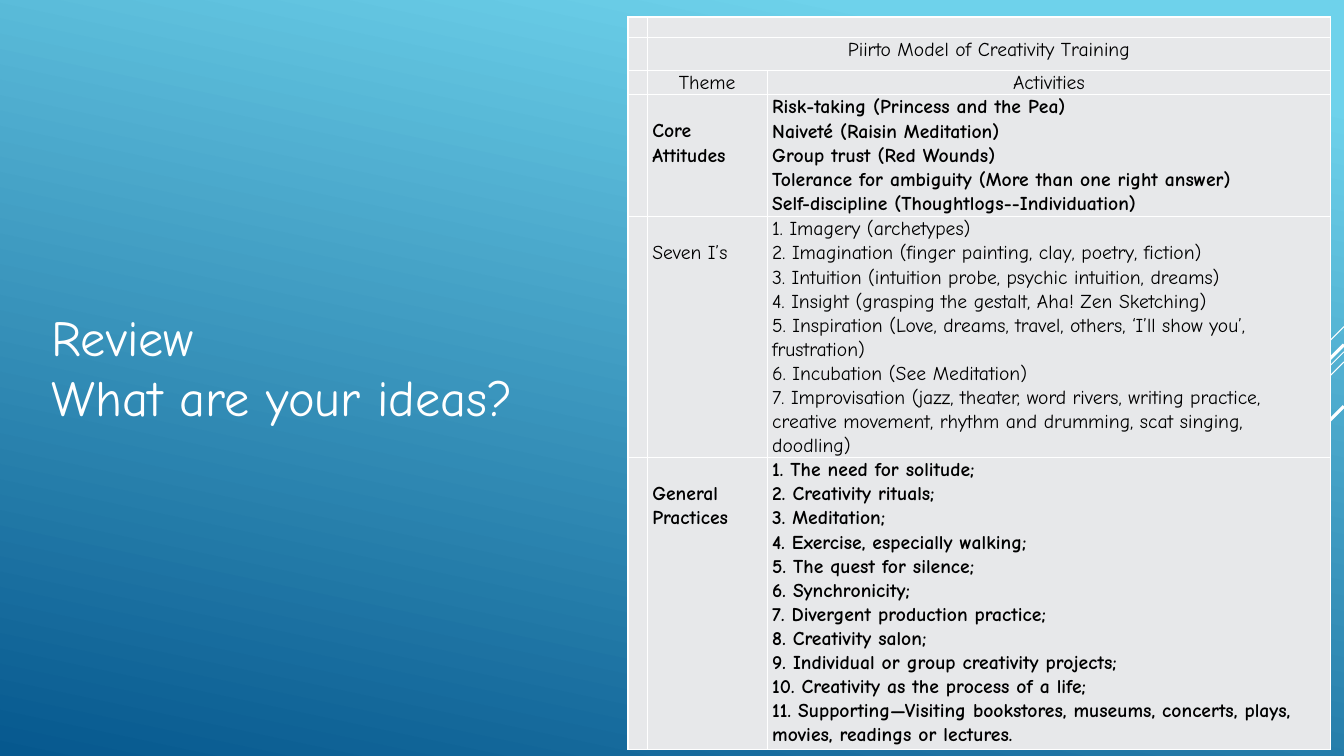
from dataclasses import dataclass

from lxml import etree
from pptx import Presentation, util as u
from pptx.dml.color import RGBColor
from pptx.enum import shapes, text
from pptx.oxml import ns

TITLE_LINES = ["Review ", "What are your ideas?"]
TABLE_TITLE = "Piirto Model of Creativity Training"
HEADINGS = ["Theme", "Activities"]
# theme, bold, activities
SECTIONS = [
    ("Core Attitudes", True, [
        "Risk-taking (Princess and the Pea)",
        "Naiveté (Raisin Meditation)",
        "Group trust (Red Wounds)",
        "Tolerance for ambiguity (More than one right answer)",
        "Self-discipline (Thoughtlogs--Individuation)",
    ]),
    ("Seven I’s", False, [
        "1. Imagery (archetypes)",
        "2. Imagination (finger painting, clay, poetry, fiction)",
        "3. Intuition (intuition probe, psychic intuition, dreams)",
        "4. Insight (grasping the gestalt, Aha! Zen Sketching)",
        "5. Inspiration (Love, dreams, travel, others, ‘I’ll show you’, frustration)",
        "6. Incubation (See Meditation)",
        "7. Improvisation (jazz, theater, word rivers, writing practice, "
        "creative movement, rhythm and drumming, scat singing, doodling)",
    ]),
    ("General Practices", True, [
        "1. The need for solitude;",
        "2. Creativity rituals;",
        "3. Meditation;",
        "4. Exercise, especially walking;",
        "5. The quest for silence;",
        "6. Synchronicity;",
        "7. Divergent production practice;",
        "8. Creativity salon;",
        "9. Individual or group creativity projects;",
        "10. Creativity as the process of a life;",
        "11. Supporting—Visiting bookstores, museums, concerts, plays, "
        "movies, readings or lectures.",
    ]),
]


@dataclass(frozen=True)
class Theme:
    font: str = "Comic Neue"
    title_size: float = 36
    table_size: float = 14
    empty_size: float = 8
    border: float = 1
    line_spacing: float = 1.07
    white: RGBColor = RGBColor(0xFF, 0xFF, 0xFF)
    black: RGBColor = RGBColor(0, 0, 0)
    cell: RGBColor = RGBColor(0xE7, 0xE8, 0xEA)
    sky: RGBColor = RGBColor(0x6E, 0xD2, 0xEB)
    sea: RGBColor = RGBColor(0x06, 0x58, 0x8E)


THEME = Theme()
SLIDE_WIDTH, SLIDE_HEIGHT = 960, 540
TITLE_BOX = (29.5, 31, 391.7, 461.5)
TABLE_LEFT, TABLE_TOP = 448.6, 12.2
COLUMN_WIDTHS = [13.7, 85.7, 402.5]
ROW_HEIGHTS = [14.4, 23.8, 17.3, 87.1, 172, 208.8]
CELL_INSET = 3.6
THEME_DROP = 17.2  # one line of table text
# start height on the right edge, run (equal across and down), line width
DIAGONALS = [
    (233.3, 72, 0.75),
    (251.3, 234.7, 0.75),
    (258.5, 149, 0.75),
    (246.2, 137.5, 2.25),
    (290.2, 100, 2.25),
]


def add_run(paragraph, words, size, color, bold=False):
    run = paragraph.add_run()
    run.text = words
    run.font.name = THEME.font
    run.font.size = u.Pt(size)
    run.font.bold = bold
    run.font.color.rgb = color


def paint_background(slide):
    fill = slide.background.fill
    fill.gradient()
    fill.gradient_angle = 258
    for stop, (position, color) in zip(fill.gradient_stops, [(0.1, THEME.sky), (1, THEME.sea)]):
        stop.position = position
        stop.color.rgb = color


def add_title(slide):
    title = slide.shapes.title
    title.left, title.top, title.width, title.height = map(u.Pt, TITLE_BOX)
    frame = title.text_frame
    frame.word_wrap = True
    frame.auto_size = text.MSO_AUTO_SIZE.NONE
    frame.vertical_anchor = text.MSO_ANCHOR.MIDDLE
    paragraph = frame.paragraphs[0]
    paragraph.alignment = text.PP_ALIGN.LEFT
    for index, line in enumerate(TITLE_LINES):
        if index:
            paragraph.add_line_break()
        add_run(paragraph, line, THEME.title_size, THEME.white)


def add_diagonals(slide):
    for top, run, width in DIAGONALS:
        line = slide.shapes.add_connector(
            shapes.MSO_CONNECTOR.STRAIGHT, u.Pt(SLIDE_WIDTH), u.Pt(top),
            u.Pt(SLIDE_WIDTH - run), u.Pt(top + run))
        line.line.color.rgb = THEME.white
        line.line.width = u.Pt(width)
        etree.SubElement(line._element.spPr, ns.qn("a:effectLst"))


def format_cell(cell):
    """Fill and border a cell, and keep its empty line from stretching the row."""
    cell.fill.solid()
    cell.fill.fore_color.rgb = THEME.cell
    cell.margin_left = cell.margin_right = u.Pt(CELL_INSET)
    cell.margin_top = cell.margin_bottom = 0
    properties = cell._tc.get_or_add_tcPr()
    for index, side in enumerate(["a:lnL", "a:lnR", "a:lnT", "a:lnB"]):
        border = etree.Element(ns.qn(side), w=str(u.Pt(THEME.border)))
        fill = etree.SubElement(border, ns.qn("a:solidFill"))
        etree.SubElement(fill, ns.qn("a:srgbClr"), val=str(THEME.white))
        properties.insert(index, border)
    etree.SubElement(cell.text_frame.paragraphs[0]._p, ns.qn("a:endParaRPr"),
                     sz=str(THEME.empty_size * 100))


def write_cell(cell, lines, bold=False, alignment=text.PP_ALIGN.LEFT):
    frame = cell.text_frame
    for index, line in enumerate(lines):
        paragraph = frame.add_paragraph() if index else frame.paragraphs[0]
        paragraph.alignment = alignment
        paragraph.line_spacing = THEME.line_spacing
        add_run(paragraph, line, THEME.table_size, THEME.black, bold)


def add_model_table(slide):
    table = slide.shapes.add_table(
        len(ROW_HEIGHTS), len(COLUMN_WIDTHS), u.Pt(TABLE_LEFT), u.Pt(TABLE_TOP),
        u.Pt(sum(COLUMN_WIDTHS)), u.Pt(sum(ROW_HEIGHTS))).table
    table.first_row = table.horz_banding = False
    for column, width in zip(table.columns, COLUMN_WIDTHS):
        column.width = u.Pt(width)
    for row, height in zip(table.rows, ROW_HEIGHTS):
        row.height = u.Pt(height)
    for cell in table.iter_cells():
        format_cell(cell)
    for row in (0, 1):
        table.cell(row, 1).merge(table.cell(row, 2))

    center = text.PP_ALIGN.CENTER
    write_cell(table.cell(1, 1), [TABLE_TITLE], alignment=center)
    for column, heading in enumerate(HEADINGS, start=1):
        write_cell(table.cell(2, column), [heading], alignment=center)
    for row, (theme, bold, activities) in enumerate(SECTIONS, start=3):
        table.cell(row, 1).margin_top = u.Pt(THEME_DROP)
        write_cell(table.cell(row, 1), [theme], bold)
        write_cell(table.cell(row, 2), activities, bold)


def main():
    presentation = Presentation()
    presentation.slide_width = u.Pt(SLIDE_WIDTH)
    presentation.slide_height = u.Pt(SLIDE_HEIGHT)
    slide = presentation.slides.add_slide(presentation.slide_layouts[5])
    paint_background(slide)
    add_title(slide)
    add_diagonals(slide)
    add_model_table(slide)
    presentation.save("out.pptx")


if __name__ == "__main__":
    main()
